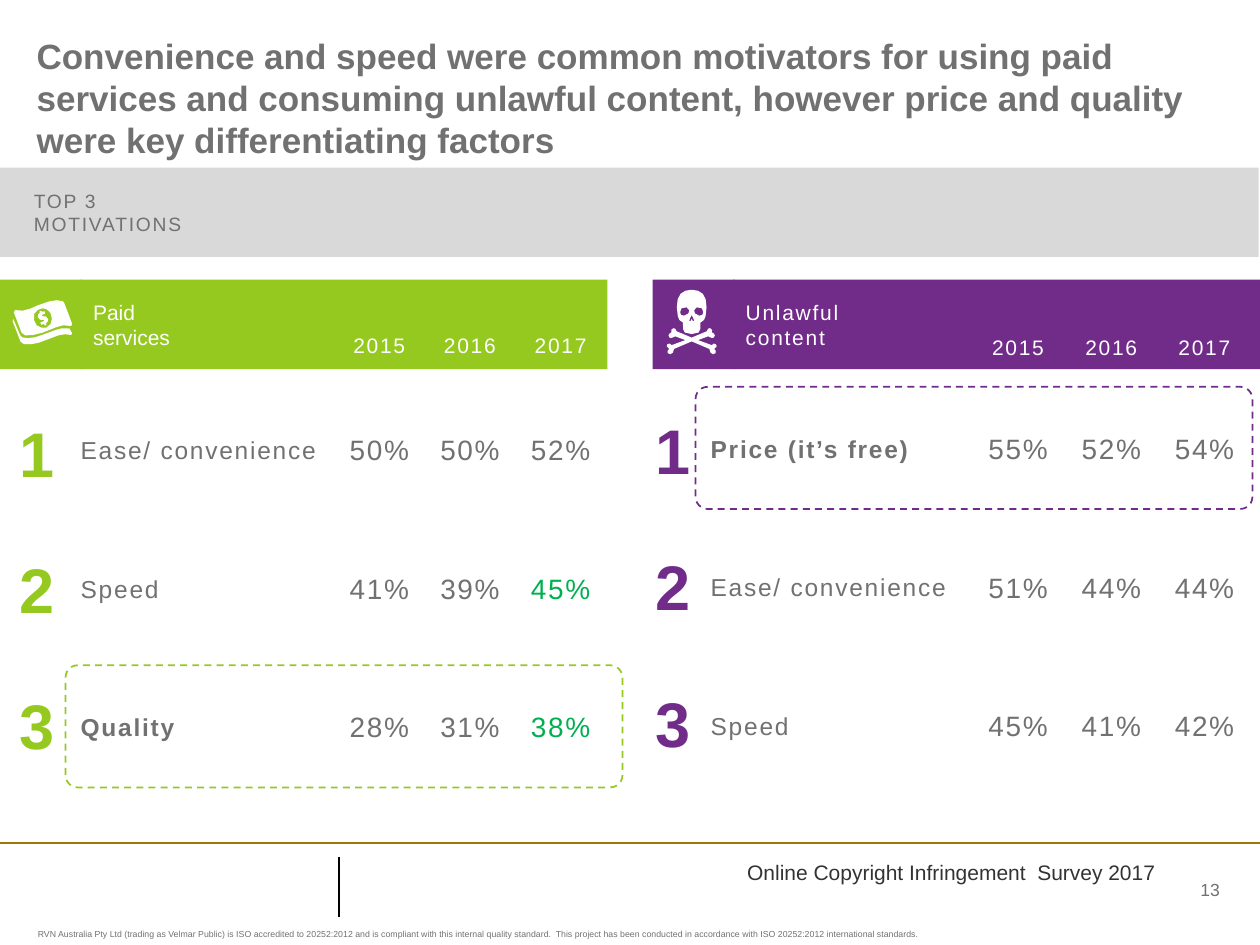
"""Build the slide comparing top motivations for paid services and unlawful content."""
from dataclasses import dataclass

from lxml import etree
from pptx import Presentation
from pptx.dml.color import RGBColor
from pptx.enum.dml import MSO_LINE
from pptx.enum.shapes import MSO_CONNECTOR, MSO_SHAPE
from pptx.enum.text import MSO_ANCHOR, PP_ALIGN
from pptx.oxml.ns import qn
from pptx.util import Inches, Pt

LEFT, CENTER, RIGHT = PP_ALIGN.LEFT, PP_ALIGN.CENTER, PP_ALIGN.RIGHT
TOP, MIDDLE = MSO_ANCHOR.TOP, MSO_ANCHOR.MIDDLE
RECTANGLE, ROUNDED = MSO_SHAPE.RECTANGLE, MSO_SHAPE.ROUNDED_RECTANGLE
STRAIGHT, DASH = MSO_CONNECTOR.STRAIGHT, MSO_LINE.DASH
PLAIN_TABLE = "{2D5ABB26-0587-4C30-8999-92F81FD0307C}"


@dataclass(frozen=True)
class Theme:
    font: str = "Arial"
    green: str = "96C920"
    purple: str = "712C8A"
    rise: str = "00B050"
    grey: str = "717171"
    dark: str = "333333"
    band: str = "D9D9D9"
    gold: str = "A07800"
    white: str = "FFFFFF"
    black: str = "000000"
    title: int = 20
    rank: int = 36
    share: int = 16
    reason: int = 14
    label: int = 12
    heading: int = 11
    number: int = 10
    note: int = 5


theme = Theme()
deck = Presentation()
deck.slide_width, deck.slide_height = Inches(10), Inches(7.5)
STEP = deck.slide_width / 100
page = deck.slides.add_slide(deck.slide_layouts[5])


def grid(*steps):
    """Turn grid steps, each a hundredth of the slide width, into lengths."""
    return [round(step * STEP) for step in steps]


def write(frame, lines, size, color, bold=False, align=LEFT, tracking=0, anchor=TOP, inset=None):
    """Fill a text frame with one formatted paragraph per line."""
    frame.word_wrap = True
    frame.vertical_anchor = anchor
    if inset is not None:
        frame.margin_left = frame.margin_right = frame.margin_top = frame.margin_bottom = inset
    for index, line in enumerate(lines):
        para = frame.add_paragraph() if index else frame.paragraphs[0]
        para.alignment = align
        span = para.add_run()
        span.text = line
        span.font.name, span.font.size, span.font.bold = theme.font, Pt(size), bold
        span.font.color.rgb = RGBColor.from_string(color)
        if tracking:
            span.font._element.set("spc", str(tracking))


title = page.shapes.title
title.left, title.top, title.width, title.height = grid(2.9, 2.7, 94, 9.3)
write(title.text_frame, [
    "Convenience and speed were common motivators for using paid services and consuming "
    "unlawful content, however price and quality were key differentiating factors"
], theme.title, theme.grey, bold=True, inset=0)
title.text_frame.paragraphs[0].line_spacing = Pt(24)

for start, end, color, weight in [
    ((0, 66.9), (100, 66.9), theme.gold, 1.5),
    ((26.9, 68), (26.9, 72.8), theme.black, 1),
]:
    rule = page.shapes.add_connector(STRAIGHT, *grid(*start, *end))
    rule.line.color.rgb = RGBColor.from_string(color)
    rule.line.width = Pt(weight)
    etree.SubElement(rule._element.spPr, qn("a:effectLst"))

for place, line, size, color, align, anchor in [
    ((3, 73.7, 94, 0.8),
     "RVN Australia Pty Ltd (trading as Velmar Public) is ISO accredited to 20252:2012 and is "
     "compliant with this internal quality standard.  This project has been conducted in "
     "accordance with ISO 20252:2012 international standards.",
     theme.note, theme.grey, LEFT, TOP),
    ((59.3, 68.2, 35.9, 4.2), "Online Copyright Infringement  Survey 2017",
     theme.label, theme.dark, LEFT, TOP),
    ((91.3, 69.2, 5.5, 2.8), "13", theme.number, theme.grey, RIGHT, MIDDLE),
]:
    box = page.shapes.add_textbox(*grid(*place))
    write(box.text_frame, [line], size, color, align=align, anchor=anchor, inset=0)

band = page.shapes.add_shape(RECTANGLE, *grid(0, 13.3, 99.9, 7.1))
band.shadow.inherit = False
band.fill.solid()
band.fill.fore_color.rgb = RGBColor.from_string(theme.band)
band.line.fill.background()
heading = page.shapes.add_textbox(*grid(1.7, 14.5, 45, 4.7))
write(heading.text_frame, ["TOP 3", "MOTIVATIONS"], theme.heading, theme.grey, tracking=100)

banknotes = [
    [(105, 2530), (160, 2660), (175, 2678), (220, 2684), (280, 2677), (360, 2650), (440, 2620),
     (490, 2606), (550, 2607), (572, 2645), (565, 2660), (520, 2653), (470, 2660), (390, 2690),
     (310, 2720), (250, 2732), (190, 2732), (163, 2712), (100, 2550)],
    [(450, 2383), (500, 2392), (512, 2410), (572, 2570), (565, 2588), (500, 2582), (440, 2600),
     (340, 2640), (260, 2660), (200, 2662), (172, 2642), (110, 2480), (120, 2462), (180, 2466),
     (240, 2450), (310, 2420), (390, 2393)],
    [(340, 2447), (300, 2460), (272, 2490), (270, 2540), (290, 2582), (330, 2602), (370, 2600),
     (402, 2572), (412, 2530), (400, 2482), (370, 2455)],
    [(315, 2470), (328, 2467), (335, 2476), (352, 2470), (358, 2490), (333, 2499), (335, 2510),
     (365, 2512), (382, 2535), (378, 2555), (363, 2565), (370, 2580), (357, 2584), (350, 2572),
     (328, 2578), (320, 2560), (348, 2550), (350, 2540), (318, 2538), (301, 2518), (303, 2495),
     (316, 2484)],
]

SKULL_AXIS = 5490
half_outlines = [
    [(0, 2300), (50, 2308), (88, 2332), (111, 2375), (118, 2440), (110, 2510), (98, 2540),
     (70, 2560), (68, 2612), (54, 2640), (0, 2652)],
    [(0, 2500), (13, 2528), (20, 2545), (12, 2552), (0, 2533)],
    [(0, 2680), (120, 2630), (130, 2610), (145, 2605), (162, 2618), (160, 2638), (175, 2647),
     (184, 2662), (176, 2680), (160, 2683), (130, 2670), (50, 2700), (160, 2740), (175, 2727),
     (193, 2733), (198, 2750), (178, 2770), (191, 2785), (190, 2803), (170, 2812), (150, 2800),
     (140, 2770), (0, 2710)],
]
skull = [
    [(SKULL_AXIS + x, y) for x, y in half] + [(SKULL_AXIS - x, y) for x, y in half[-2:0:-1]]
    for half in half_outlines
]
eye = [(40, 2440), (19, 2463), (26, 2488), (60, 2506), (85, 2500), (92, 2477), (80, 2447)]
skull += [[(SKULL_AXIS + side * x, y) for x, y in eye] for side in (1, -1)]

YEARS = ["2015", "2016", "2017"]
panels = [
    dict(left=0, color=theme.green, label=["Paid", "services"], tracking=0, icon=banknotes,
         rank_at=(0.2, 32.4), frame_at=(5.2, 52.8), table_at=(5.4, 24.7), header=5.6,
         columns=(21.1, 7.2), key="Quality", risen=["45%", "38%"],
         rows=[["Ease/ convenience", "50%", "50%", "52%"],
               ["Speed", "41%", "39%", "45%"],
               ["Quality", "28%", "31%", "38%"]]),
    dict(left=51.8, color=theme.purple, label=["Unlawful", "content"], tracking=100, icon=skull,
         rank_at=(50.7, 32.2), frame_at=(55.2, 30.7), table_at=(55.4, 25.1), header=5.1,
         columns=(21.7, 7.4), key="Price (it’s free)", risen=[],
         rows=[["Price (it’s free)", "55%", "52%", "54%"],
               ["Ease/ convenience", "51%", "44%", "44%"],
               ["Speed", "45%", "41%", "42%"]]),
]

for panel in panels:
    color = RGBColor.from_string(panel["color"])
    for offset, width in [(0, 6.5), (6.4, 41.8)]:
        header = page.shapes.add_shape(RECTANGLE, *grid(panel["left"] + offset, 22.2, width, 7.1))
        header.shadow.inherit = False
        header.fill.solid()
        header.fill.fore_color.rgb = color
        header.line.fill.background()
    write(header.text_frame, panel["label"], theme.label, theme.white,
          tracking=panel["tracking"], anchor=MIDDLE)

    outlines = panel["icon"]
    builder = page.shapes.build_freeform(*outlines[0][0], scale=STEP / 100)
    builder.add_line_segments(outlines[0][1:])
    for outline in outlines[1:]:
        builder.move_to(*outline[0])
        builder.add_line_segments(outline[1:])
    icon = builder.convert_to_shape()
    icon.shadow.inherit = False
    icon.fill.solid()
    icon.fill.fore_color.rgb = RGBColor.from_string(theme.white)
    icon.line.fill.background()

    highlight = page.shapes.add_shape(ROUNDED, *grid(*panel["frame_at"], 44.2, 9.7))
    highlight.shadow.inherit = False
    highlight.adjustments[0] = 0.1
    highlight.fill.background()
    highlight.line.color.rgb = color
    highlight.line.width, highlight.line.dash_style = Pt(1), DASH

    left, top = panel["rank_at"]
    for index in range(3):
        rank = page.shapes.add_textbox(*grid(left, top + 10.8 * index, 5.5, 6))
        write(rank.text_frame, [str(index + 1)], theme.rank, panel["color"], bold=True, align=CENTER)

    first, other = panel["columns"]
    size = (first + 3 * other, panel["header"] + 33)
    table = page.shapes.add_table(4, 4, *grid(*panel["table_at"], *size)).table
    table.first_row = table.horz_banding = False
    table._tbl.tblPr.find(qn("a:tableStyleId")).text = PLAIN_TABLE
    for column, width in zip(table.columns, grid(first, other, other, other)):
        column.width = width
    for row, height in zip(table.rows, grid(panel["header"], 11, 11, 11)):
        row.height = height
    for y, values in enumerate([[""] + YEARS] + panel["rows"]):
        for x, value in enumerate(values):
            cell = table.cell(y, x)
            cell.fill.background()
            cell.vertical_anchor = MIDDLE
            if not value:
                continue
            text_size = theme.label if y == 0 else theme.share if x else theme.reason
            ink = theme.white if y == 0 else theme.rise if value in panel["risen"] else theme.grey
            write(cell.text_frame, [value], text_size, ink, bold=value == panel["key"],
                  align=CENTER if x else LEFT, tracking=100, anchor=None)

deck.save("out.pptx")
